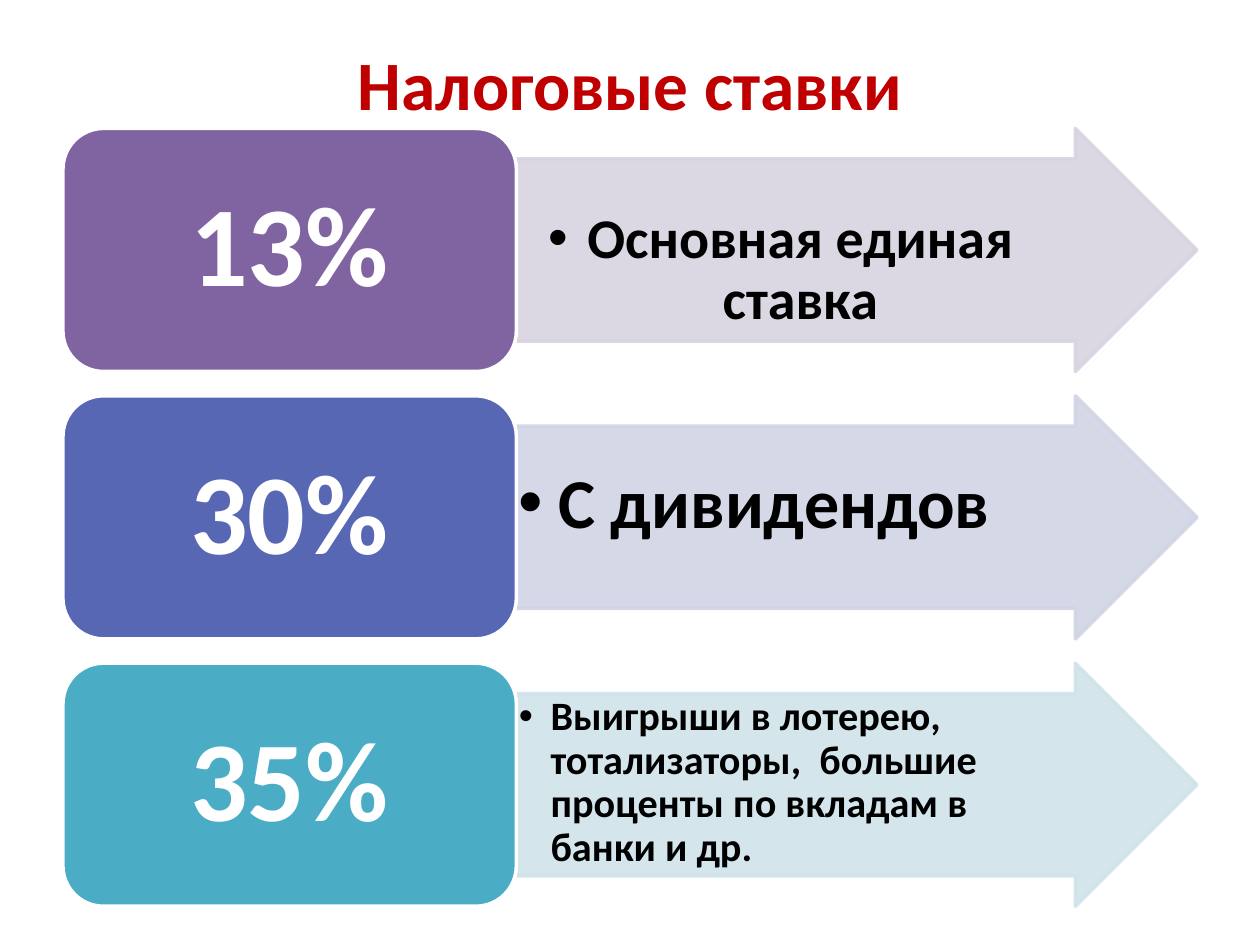
from lxml.etree import SubElement
from pptx import Presentation
from pptx.dml.color import RGBColor
from pptx.enum.shapes import MSO_SHAPE as Preset
from pptx.enum.text import MSO_ANCHOR as Anchor, PP_ALIGN as Align
from pptx.oxml.ns import qn
from pptx.util import Cm, Pt

COLORS = {
    "title": "C00000",
    "text": "000000",
    "white": "FFFFFF",
    "purple": "8064A2",
    "pale purple": "D8D3E0",
    "blue": "5767B4",
    "pale blue": "D1D4E5",
    "teal": "4BACC6",
    "pale teal": "D0E3EA",
}


def write(box, text, size, color="text", align=Align.CENTER, anchor=Anchor.MIDDLE,
          insets=(0, 0, 0, 0), spacing=0.9, hanging=None):
    frame = box.text_frame
    frame.word_wrap = True
    frame.vertical_anchor = anchor
    frame.margin_left, frame.margin_top, frame.margin_right, frame.margin_bottom = map(Cm, insets)
    para = frame.paragraphs[0]
    para.alignment = align
    para.line_spacing = spacing
    span = para.add_run()
    span.text = text
    span.font.name = "Calibri"
    span.font.size = Pt(size)
    span.font.bold = True
    span.font.color.rgb = RGBColor.from_string(COLORS[color])
    if hanging:
        properties = para._p.get_or_add_pPr()
        properties.set("marL", str(Cm(hanging)))
        properties.set("indent", str(-Cm(hanging)))
        SubElement(properties, qn("a:buFont"), typeface="Arial")
        SubElement(properties, qn("a:buChar"), char="•")


def add_block(page, preset, left, top, width, fill, line, opacity=None):
    block = page.shapes.add_shape(preset, Cm(left), Cm(top), Cm(width), Cm(4.9))
    block.shadow.inherit = False
    block.fill.solid()
    block.fill.fore_color.rgb = RGBColor.from_string(COLORS[fill])
    block.line.color.rgb = RGBColor.from_string(COLORS[line])
    block.line.width = Pt(2)
    if opacity:
        for tint in block._element.spPr.iter(qn("a:srgbClr")):
            SubElement(tint, qn("a:alpha"), val=str(opacity * 1000))
    return block


deck = Presentation()
deck.slide_width, deck.slide_height = Cm(25.4), Cm(19.05)
page = deck.slides.add_slide(deck.slide_layouts[6])

title = page.shapes.add_textbox(Cm(1.27), Cm(0.76), Cm(22.86), Cm(1.83))
write(title, "Налоговые ставки", 39.6, color="title", spacing=1)

rates = [
    ("13%", "purple", "Основная единая ставка", 32, Align.CENTER, 1.04, 0.79),
    ("30%", "blue", "С дивидендов", 40, Align.LEFT, 0.84, 0.79),
    ("35%", "teal", "Выигрыши в лотерею,  тотализаторы,  большие проценты по вкладам в банки и др.",
     23, Align.LEFT, 0.05, 0.64),
]

for row, (rate, color, meaning, size, align, top_inset, hanging) in enumerate(rates):
    top = 2.59 + row * 5.39
    pale = f"pale {color}"
    arrow = add_block(page, Preset.RIGHT_ARROW, 10.41, top, 13.72, pale, pale, opacity=90)
    arrow.adjustments[0], arrow.adjustments[1] = 0.75, 0.5
    write(arrow, meaning, size, align=align, anchor=Anchor.TOP,
          insets=(0.05, top_inset, 1.27, 0.05), hanging=hanging)
    label = add_block(page, Preset.ROUNDED_RECTANGLE, 1.27, top, 9.14, color, "white")
    write(label, rate, 65, color="white", insets=(0.69, 0.36, 0.69, 0.36))

deck.save("out.pptx")
